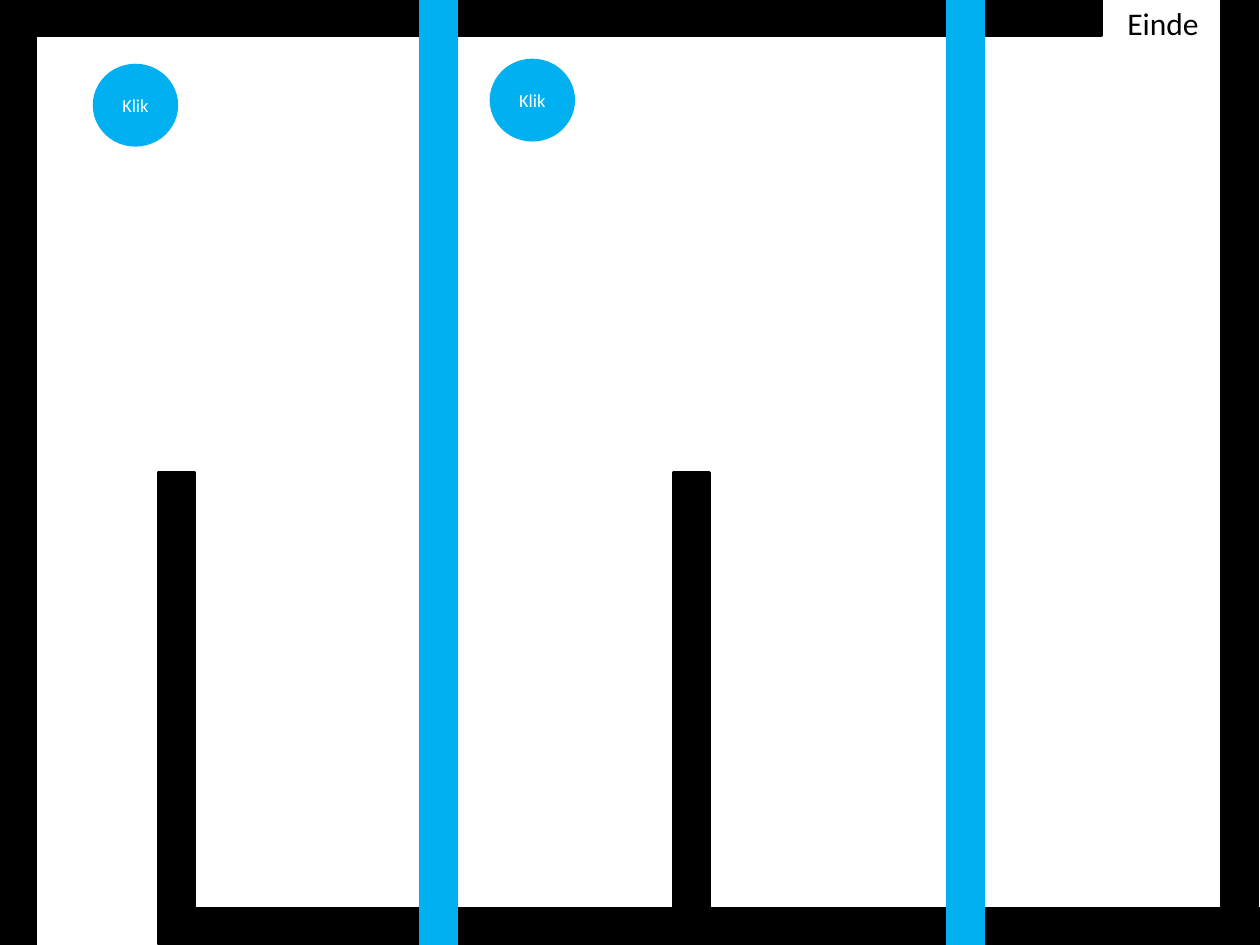
import pptx
import pptx.util
import pptx.dml.color
import pptx.enum.shapes
import pptx.enum.text

Inches = pptx.util.Inches
Shapes = pptx.enum.shapes.MSO_SHAPE

BLACK, WHITE, BLUE = "000000", "FFFFFF", "00B0F0"
SLIDE_W, SLIDE_H = 10, 7.5
BAR = 0.28  # thickness of every wall and door


def rgb(hex_color):
    return pptx.dml.color.RGBColor.from_string(hex_color)


def add_block(slide, box, color, kind=Shapes.RECTANGLE):
    block = slide.shapes.add_shape(kind, *(Inches(length) for length in box))
    block.shadow.inherit = False
    block.fill.solid()
    block.fill.fore_color.rgb = rgb(color)
    block.line.color.rgb = rgb(color)
    block.line.width = pptx.util.Pt(2)
    return block


def add_label(block, text, size, color):
    frame = block.text_frame
    frame.word_wrap = True
    frame.vertical_anchor = pptx.enum.text.MSO_ANCHOR.MIDDLE
    paragraph = frame.paragraphs[0]
    paragraph.text = text
    paragraph.alignment = pptx.enum.text.PP_ALIGN.CENTER
    paragraph.font.name = "Calibri"
    paragraph.font.size = pptx.util.Pt(size)
    paragraph.font.color.rgb = rgb(color)


def add_finish(slide, box):
    add_label(add_block(slide, box, WHITE), "Einde", 18, BLACK)


def add_walls(slide, box):
    left, top, width, height = box
    long_wall, inner_wall, entry = 8.74, 3.74, 1.26

    # Outer side walls
    for x in (left, left + width - BAR):
        add_block(slide, (x, top, BAR, height), BLACK)

    # Top wall leaves the exit open, bottom wall leaves the entry open
    add_block(slide, (left, top, long_wall, BAR), BLACK)
    add_block(slide, (left + entry, top + height - BAR - 0.01, long_wall, BAR), BLACK)

    # Inner walls rise from the bottom wall
    for x in (left + entry, left + 5.35):
        add_block(slide, (x, top + height / 2, BAR, inner_wall), BLACK)


def add_door(slide, box):
    add_block(slide, box, BLUE)


def add_button(slide, box):
    add_label(add_block(slide, box, BLUE, Shapes.OVAL), "Klik", 10.5, WHITE)


def main():
    presentation = pptx.Presentation()
    presentation.slide_width = Inches(SLIDE_W)
    presentation.slide_height = Inches(SLIDE_H)
    maze = presentation.slides.add_slide(presentation.slide_layouts[6])

    add_finish(maze, (8.8, 0.01, 0.86, 0.35))
    add_walls(maze, (0, 0, 9.98, SLIDE_H))

    # Sliding doors and the buttons that open them
    door_height = 11.72
    add_door(maze, (3.34, 0, BAR, door_height))
    for x, y in ((0.75, 0.52), (3.9, 0.48)):
        add_button(maze, (x, y, 0.65, 0.63))
    add_door(maze, (7.52, -0.03, BAR, door_height))

    presentation.save("out.pptx")


if __name__ == "__main__":
    main()
